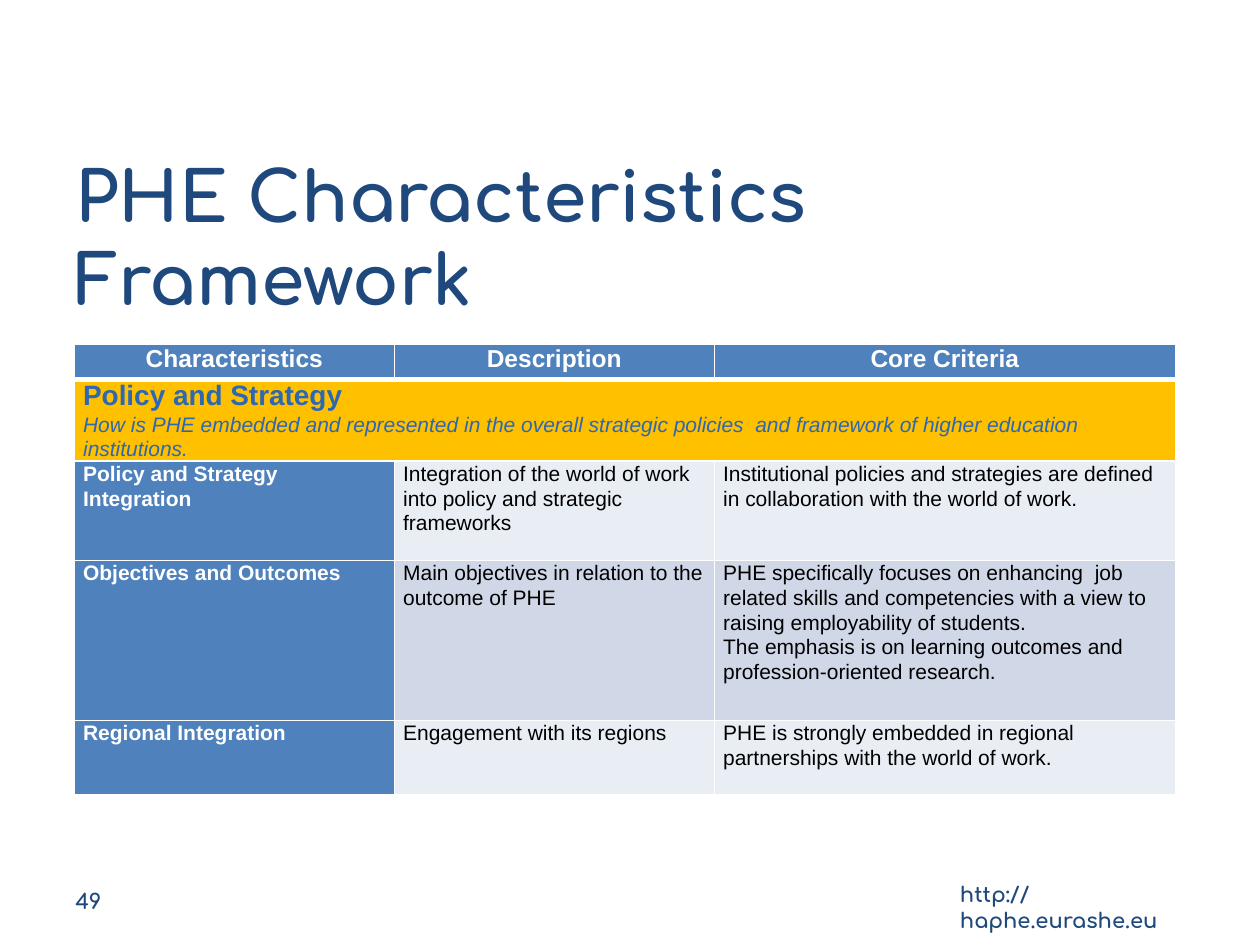
"""Build the PHE Characteristics Framework slide."""
from dataclasses import dataclass

from lxml import etree
from pptx import Presentation
from pptx.dml.color import RGBColor
from pptx.enum.text import MSO_ANCHOR, MSO_AUTO_SIZE, PP_ALIGN
from pptx.oxml.ns import qn
from pptx.util import Inches, Pt

LEFT, CENTER = PP_ALIGN.LEFT, PP_ALIGN.CENTER
TOP, MIDDLE = MSO_ANCHOR.TOP, MSO_ANCHOR.MIDDLE
NO_FIT = MSO_AUTO_SIZE.NONE

NAVY, BLUE, LINK_BLUE, AMBER = "1F497D", "4F81BD", "2E67B2", "FFC000"
WHITE, BLACK, PALE, MID = "FFFFFF", "000000", "E9EDF4", "D0D8E8"

COLS = [2.54, 2.54, 3.66]
ROWS = [0.28, 0.63, 0.79, 1.27, 0.59]


@dataclass(frozen=True)
class Style:
    """Text format of one paragraph."""
    size: float
    color: str
    bold: bool = False
    italic: bool = False
    name: str = "Arial"
    align: PP_ALIGN = LEFT


@dataclass(frozen=True)
class Footer:
    """A footer text and its box in inches."""
    text: str
    left: float
    top: float
    width: float


TITLE = Style(39.6, NAVY, bold=True, name="Comfortaa")
FOOT = Style(12, NAVY, bold=True, name="Comfortaa")
HEAD = Style(14, WHITE, bold=True, align=CENTER)
SECTION = Style(16, LINK_BLUE, bold=True)
QUESTION = Style(12, LINK_BLUE, italic=True)
LABEL = Style(12, WHITE, bold=True)
BODY = Style(12, BLACK)

HEADERS = ["Characteristics", "Description", "Core Criteria"]
SECTION_TITLE = "Policy and Strategy"
SECTION_QUESTION = (
    "How is PHE embedded and represented in the overall strategic policies  "
    "and framework of higher education institutions.")
CRITERIA = [
    ("Policy and Strategy Integration",
     "Integration of the world of work into policy and strategic frameworks",
     "Institutional policies and strategies are defined in collaboration "
     "with the world of work."),
    ("Objectives and Outcomes",
     "Main objectives in relation to the outcome of PHE",
     "PHE specifically focuses on enhancing  job related skills and "
     "competencies with a view to raising employability of students. \n"
     "The emphasis is on learning outcomes and profession-oriented research."),
    ("Regional Integration",
     "Engagement with its regions",
     "PHE is strongly embedded in regional partnerships with the world of work."),
]
FOOTERS = [
    Footer("http://haphe.eurashe.eu", 7.52, 6.95, 2.15),
    Footer("49", 0.5, 7, 1.58),
]


def rgb(color: str) -> RGBColor:
    """Turn a hex string into a colour."""
    return RGBColor.from_string(color)


def write(p, text: str, style: Style) -> None:
    """Put formatted text into a paragraph."""
    p.text = text
    p.alignment = style.align
    formats = {"size": Pt(style.size), "bold": style.bold,
               "italic": style.italic, "name": style.name}
    for r in p.runs:
        for key, value in formats.items():
            setattr(r.font, key, value)
        r.font.color.rgb = rgb(style.color)


def set_frame(tf, text: str, style: Style, anchor: MSO_ANCHOR) -> None:
    """Fill a wrapped text frame with one paragraph."""
    formats = {"word_wrap": True, "auto_size": NO_FIT, "vertical_anchor": anchor}
    for key, value in formats.items():
        setattr(tf, key, value)
    write(tf.paragraphs[0], text, style)


def set_borders(cell, widths: dict[str, float]) -> None:
    """Draw white cell borders of the given widths in points."""
    tcPr = cell._tc.get_or_add_tcPr()
    for i, (side, width) in enumerate(widths.items()):
        ln = etree.Element(qn(f"a:ln{side}"), w=str(Pt(width)))
        fill = etree.SubElement(ln, qn("a:solidFill"))
        etree.SubElement(fill, qn("a:srgbClr"), val=WHITE)
        tcPr.insert(i, ln)


def set_cell(cell, paragraphs: list[tuple[str, Style]], fill: str,
             bottom: float = 1, top: float = 1) -> None:
    """Fill, border and write one table cell."""
    formats = {"margin_left": Inches(0.07), "margin_right": Inches(0.07),
               "margin_top": 0, "margin_bottom": 0, "vertical_anchor": TOP}
    for key, value in formats.items():
        setattr(cell, key, value)
    cell.fill.solid()
    cell.fill.fore_color.rgb = rgb(fill)
    set_borders(cell, {"L": 1, "R": 1, "T": top, "B": bottom})
    tf = cell.text_frame
    for i, (text, style) in enumerate(paragraphs):
        p = tf.add_paragraph() if i else tf.paragraphs[0]
        write(p, text, style)
        p.line_spacing = 1.05


def add_criteria_table(s) -> None:
    """Add the table of characteristics and core criteria."""
    table = s.shapes.add_table(
        len(ROWS), len(COLS), Inches(0.59), Inches(2.73),
        Inches(sum(COLS)), Inches(sum(ROWS))).table
    for col, width in zip(table.columns, COLS):
        col.width = Inches(width)
    for row, height in zip(table.rows, ROWS):
        row.height = Inches(height)
    for c, header in enumerate(HEADERS):
        set_cell(table.cell(0, c), [(header, HEAD)], BLUE, bottom=3)
    section = table.cell(1, 0)
    section.merge(table.cell(1, len(COLS) - 1))
    set_cell(section, [(SECTION_TITLE, SECTION), (SECTION_QUESTION, QUESTION)],
             AMBER, top=3)
    for i, texts in enumerate(CRITERIA):
        band = MID if i % 2 else PALE
        for c, text in enumerate(texts):
            style, fill = (BODY, band) if c else (LABEL, BLUE)
            set_cell(table.cell(i + 2, c), [(text, style)], fill)


def main() -> None:
    """Build and save the slide."""
    prs = Presentation()
    prs.slide_width, prs.slide_height = Inches(10), Inches(7.5)
    s = prs.slides.add_slide(prs.slide_layouts[5])
    for footer in FOOTERS:
        sp = s.shapes.add_textbox(Inches(footer.left), Inches(footer.top),
                                  Inches(footer.width), Inches(0.3))
        set_frame(sp.text_frame, footer.text, FOOT, TOP)
    title = s.shapes.title
    box = {"left": 0.5, "top": 1.25, "width": 9, "height": 1.25}
    for key, value in box.items():
        setattr(title, key, Inches(value))
    set_frame(title.text_frame, "PHE Characteristics Framework", TITLE, MIDDLE)
    add_criteria_table(s)
    prs.save("out.pptx")


if __name__ == "__main__":
    main()
